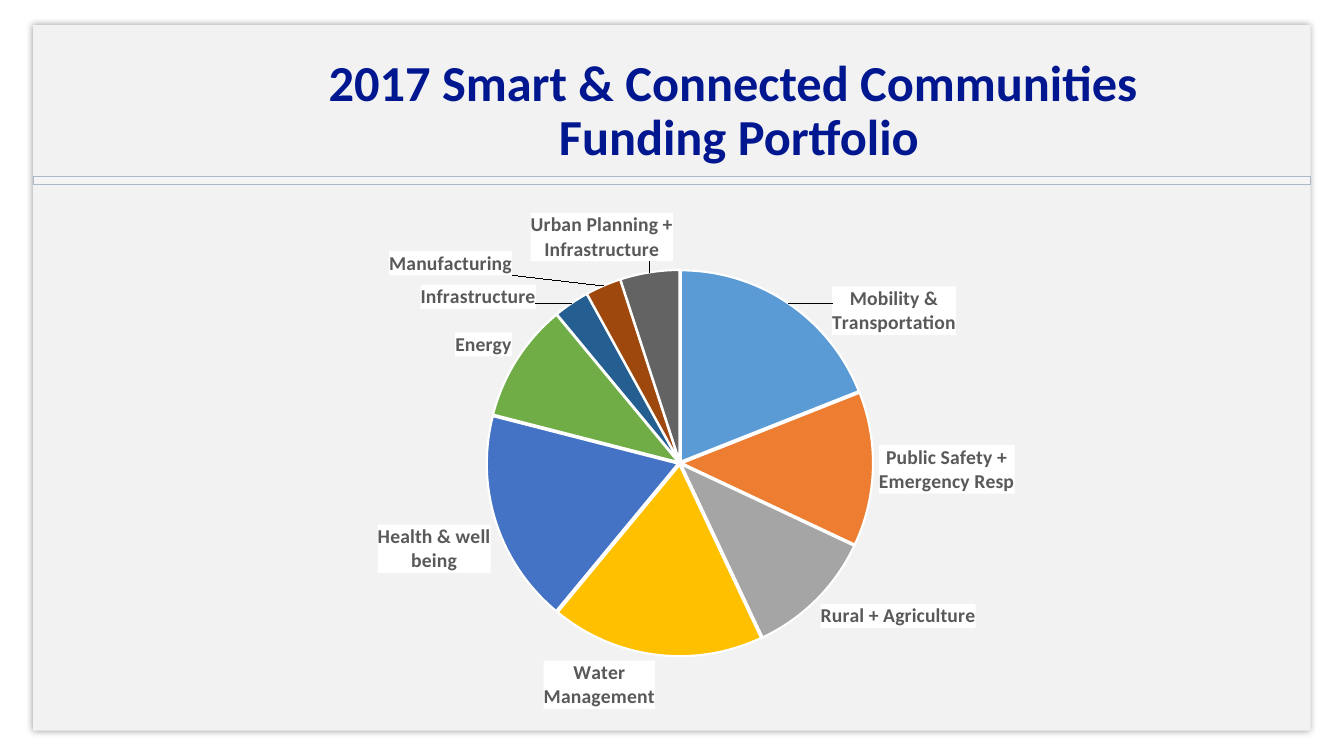
from copy import deepcopy

from lxml.etree import QName
from pptx import Presentation
from pptx.chart.data import CategoryChartData
from pptx.dml.color import RGBColor
from pptx.enum.chart import XL_CHART_TYPE as ChartType, XL_LABEL_POSITION as LabelPosition
from pptx.enum.shapes import MSO_SHAPE as Shape
from pptx.enum.text import MSO_ANCHOR as Anchor, MSO_AUTO_SIZE as AutoSize, PP_ALIGN as Align
from pptx.oxml import parse_xml
from pptx.oxml.ns import nsdecls, qn
from pptx.util import Inches, Pt

WHITE = RGBColor(0xFF, 0xFF, 0xFF)
PANEL = RGBColor(0xF2, 0xF2, 0xF2)
BAND = RGBColor(0xF5, 0xF5, 0xF5)
BAND_LINE = RGBColor(0xAD, 0xB9, 0xCA)
NAVY = RGBColor(0x01, 0x17, 0x90)
LABEL_GREY = RGBColor(0x59, 0x59, 0x59)
FONT = "Calibri"

TITLE_LINES = ["2017 Smart & Connected Communities ", "Funding Portfolio"]
FUNDING = [
    ("Mobility & Transportation", 19, RGBColor(0x5B, 0x9B, 0xD5)),
    ("Public Safety + Emergency Resp", 13, RGBColor(0xED, 0x7D, 0x31)),
    ("Rural + Agriculture", 11, RGBColor(0xA5, 0xA5, 0xA5)),
    ("Water Management", 18, RGBColor(0xFF, 0xC0, 0x00)),
    ("Health & well being", 18, RGBColor(0x44, 0x72, 0xC4)),
    ("Energy", 10, RGBColor(0x70, 0xAD, 0x47)),
    ("Infrastructure", 3, RGBColor(0x25, 0x5E, 0x91)),
    ("Manufacturing", 3, RGBColor(0x9E, 0x48, 0x0E)),
    ("Urban Planning + Infrastructure", 5, RGBColor(0x63, 0x63, 0x63)),
]
LABEL_SHIFTS = {0: (0.05, 0.07), 6: (-0.04, 0.02), 7: (-0.11, -0.01), 8: (0.03, -0.01)}

WIDTH, HEIGHT = 13.33, 7.5
MARGIN_X, MARGIN_Y = 0.33, 0.25
PANEL_WIDTH = WIDTH - 2 * MARGIN_X
CHART_WIDTH, CHART_HEIGHT = 8, 5.15
PIE_SIZE = 3.83
PIE_CENTER = (0.51, 0.5)


def add_rectangle(slide, left, top, width, height, fill):
    shape = slide.shapes.add_shape(
        Shape.RECTANGLE, Inches(left), Inches(top), Inches(width), Inches(height))
    shape.shadow.inherit = False
    shape.fill.solid()
    shape.fill.fore_color.rgb = fill
    shape.line.fill.background()
    return shape


def add_background(slide):
    panel = add_rectangle(slide, MARGIN_X, MARGIN_Y, PANEL_WIDTH, HEIGHT - 2 * MARGIN_Y, PANEL)
    panel.element.spPr.find(qn("a:effectLst")).append(parse_xml(
        f'<a:outerShdw {nsdecls("a")} blurRad="{Pt(5)}" dist="0" dir="0" algn="ctr" '
        'rotWithShape="0"><a:srgbClr val="000000"><a:alpha val="40000"/></a:srgbClr>'
        '</a:outerShdw>'))
    band = add_rectangle(slide, MARGIN_X, 1.75, PANEL_WIDTH, 0.08, BAND)
    band.line.color.rgb = BAND_LINE
    band.line.width = Pt(0.25)


def fill_title(slide):
    title = slide.shapes.title
    title.left, title.top, title.width, title.height = map(Inches, (1.79, 0.5, 11.08, 1.23))
    frame = title.text_frame
    frame.auto_size = AutoSize.NONE
    frame.vertical_anchor = Anchor.MIDDLE
    paragraph = frame.paragraphs[0]
    paragraph.alignment = Align.CENTER
    paragraph.line_spacing = 0.9
    for index, line in enumerate(TITLE_LINES):
        if index:
            paragraph.add_line_break()
        run = paragraph.add_run()
        run.text = line
        run.font.name, run.font.size, run.font.bold = FONT, Pt(36), True
        run.font.color.rgb = NAVY
    title.element.getparent().append(title.element)


def manual_layout(settings):
    items = "".join(f'<c:{name} val="{value}"/>' for name, value in settings)
    return parse_xml(
        f'<c:layout {nsdecls("c")}><c:manualLayout>{items}</c:manualLayout></c:layout>')


def place_pie(chart):
    plot_area = chart.element.find(".//" + qn("c:plotArea"))
    for layout in plot_area.findall(qn("c:layout")):
        plot_area.remove(layout)
    width, height = PIE_SIZE / CHART_WIDTH, PIE_SIZE / CHART_HEIGHT
    plot_area.insert(0, manual_layout([
        ("layoutTarget", "inner"), ("xMode", "edge"), ("yMode", "edge"),
        ("x", round(PIE_CENTER[0] - width / 2, 3)), ("y", round(PIE_CENTER[1] - height / 2, 3)),
        ("w", round(width, 3)), ("h", round(height, 3))]))


def style_labels(series):
    labels = series.data_labels
    labels.show_category_name = True
    labels.show_value = False
    labels.show_percentage = False
    labels.position = LabelPosition.OUTSIDE_END
    font = labels.font
    font.name, font.size, font.bold = FONT, Pt(14), True
    font.color.rgb = LABEL_GREY
    group = series.data_labels._element
    group.find(qn("c:txPr")).addprevious(parse_xml(
        f'<c:spPr {nsdecls("c", "a")}><a:solidFill><a:srgbClr val="{WHITE}"/></a:solidFill>'
        '<a:ln><a:noFill/></a:ln></c:spPr>'))
    shared = [child for child in group
              if QName(child).localname not in ("showLeaderLines", "leaderLines")]
    for position, (index, (x, y)) in enumerate(LABEL_SHIFTS.items()):
        label = parse_xml(f'<c:dLbl {nsdecls("c")}><c:idx val="{index}"/></c:dLbl>')
        label.append(manual_layout([("x", x), ("y", y)]))
        for child in shared:
            label.append(deepcopy(child))
        group.insert(position, label)


def add_funding_chart(slide):
    data = CategoryChartData()
    data.categories = [name for name, _, _ in FUNDING]
    data.add_series("Series 1", [value for _, value, _ in FUNDING])
    chart = slide.shapes.add_chart(
        ChartType.PIE, Inches(2.66), Inches(2.02),
        Inches(CHART_WIDTH), Inches(CHART_HEIGHT), data).chart
    chart.has_legend = False
    chart.has_title = False
    chart.font.name, chart.font.size = FONT, Pt(10)
    plot = chart.plots[0]
    plot.vary_by_categories = True
    series = plot.series[0]
    for index, (_, _, color) in enumerate(FUNDING):
        style = series.points[index].format
        style.fill.solid()
        style.fill.fore_color.rgb = color
        style.line.color.rgb = WHITE
        style.line.width = Pt(1.5)
    series._element.find(qn("c:tx")).addnext(
        parse_xml(f'<c:explosion {nsdecls("c")} val="1"/>'))
    style_labels(series)
    place_pie(chart)


def main():
    presentation = Presentation()
    presentation.slide_width, presentation.slide_height = Inches(WIDTH), Inches(HEIGHT)
    slide = presentation.slides.add_slide(presentation.slide_layouts[5])
    add_background(slide)
    fill_title(slide)
    add_funding_chart(slide)
    presentation.save("out.pptx")


if __name__ == "__main__":
    main()
